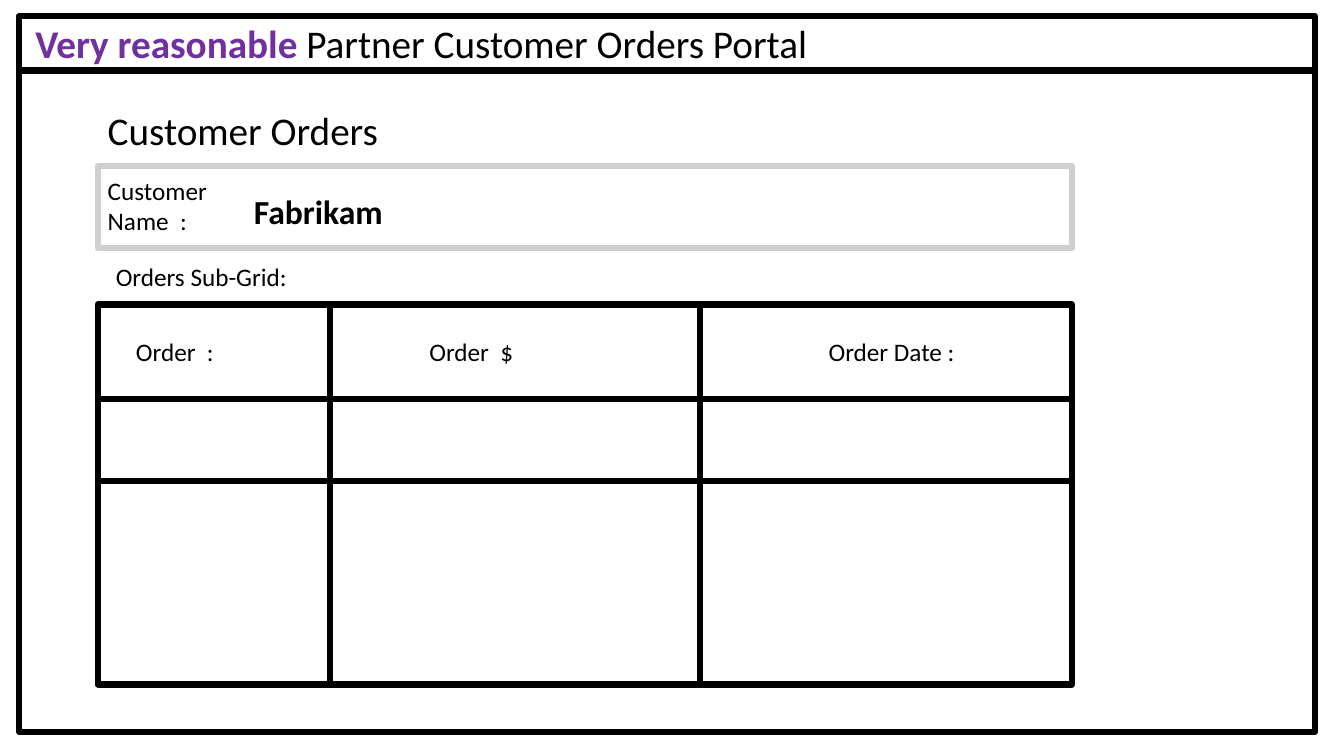
"""Build the wireframe of the partner customer orders portal."""
from pptx import Presentation
from pptx import util as u
from pptx.dml.color import RGBColor
from pptx.enum import shapes, text

BLACK = RGBColor(0x00, 0x00, 0x00)
GREY = RGBColor(0xD0, 0xCE, 0xCE)
PURPLE = RGBColor(0x70, 0x30, 0xA0)

portal = Presentation()
portal.slide_width, portal.slide_height = u.Inches(13.33), u.Inches(7.5)
page = portal.slides.add_slide(portal.slide_layouts[5])

PAGE_LEFT, PAGE_WIDTH = 0.19, 12.85
HEADER_TOP, BODY_TOP, PAGE_BOTTOM = 0.16, 0.7, 7.26
FORM_LEFT, FORM_WIDTH = 0.97, 9.66
NAME_TOP, ROW_HEIGHT = 1.65, 0.81
GRID_TOP, GRID_HEIGHT = 3.02, 3.77
AMOUNT_LEFT, AMOUNT_WIDTH = 3.27, 3.67
FIRST_ROW_TOP, LABEL_TOP = 3.96, 3.29


def format_text(frame, size, color=BLACK, bold=False):
    frame.word_wrap = True
    frame.auto_size = text.MSO_AUTO_SIZE.NONE
    frame.vertical_anchor = text.MSO_ANCHOR.TOP
    paragraph = frame.paragraphs[0]
    paragraph.alignment = text.PP_ALIGN.LEFT
    for run in paragraph.runs:
        run.font.name, run.font.size = "Calibri", u.Pt(size)
        run.font.color.rgb, run.font.bold = color, bold


outlines = [
    (PAGE_LEFT, BODY_TOP, PAGE_WIDTH, PAGE_BOTTOM - BODY_TOP, BLACK),
    (FORM_LEFT, GRID_TOP, FORM_WIDTH, GRID_HEIGHT, BLACK),
    (AMOUNT_LEFT, GRID_TOP, AMOUNT_WIDTH, GRID_HEIGHT, BLACK),
    (FORM_LEFT, FIRST_ROW_TOP, FORM_WIDTH, ROW_HEIGHT, BLACK),
    (PAGE_LEFT, HEADER_TOP, PAGE_WIDTH, BODY_TOP - HEADER_TOP, BLACK),
    (FORM_LEFT, NAME_TOP, FORM_WIDTH, ROW_HEIGHT, GREY),
]
for *bounds, color in outlines:
    outline = page.shapes.add_shape(
        shapes.MSO_SHAPE.RECTANGLE, *map(u.Inches, bounds))
    outline.shadow.inherit = False
    outline.fill.background()
    outline.line.color.rgb = color
    outline.line.width = u.Pt(4.5)

heading = page.shapes.title
heading.left, heading.top, heading.width, heading.height = map(
    u.Inches, (0.25, 0.14, 8.39, 0.57))
heading.text_frame.text = "Very reasonable "
heading.text_frame.paragraphs[0].add_run().text = "Partner Customer Orders Portal"
format_text(heading.text_frame, 28)
tagline = heading.text_frame.paragraphs[0].runs[0].font
tagline.color.rgb, tagline.bold = PURPLE, True

labels = [
    ("Customer Orders", FORM_LEFT, 1.01, 5.55, 0.57, 28, False),
    ("Customer Name  :", FORM_LEFT, 1.69, 1.45, 0.71, 18, False),
    ("Fabrikam", 2.42, 1.84, 2.07, 0.5, 24, True),
    ("Orders Sub-Grid:", 1.05, 2.54, 3.44, 0.4, 18, False),
    ("Order  :", 1.25, LABEL_TOP, 1.45, 0.4, 18, False),
    ("Order  $", 4.16, LABEL_TOP, 1.45, 0.4, 18, False),
    ("Order Date :", 8.12, LABEL_TOP, 1.95, 0.4, 18, False),
]
for wording, left, top, width, height, size, bold in labels:
    label = page.shapes.add_textbox(*map(u.Inches, (left, top, width, height)))
    label.text_frame.text = wording
    format_text(label.text_frame, size, bold=bold)

portal.save("out.pptx")
